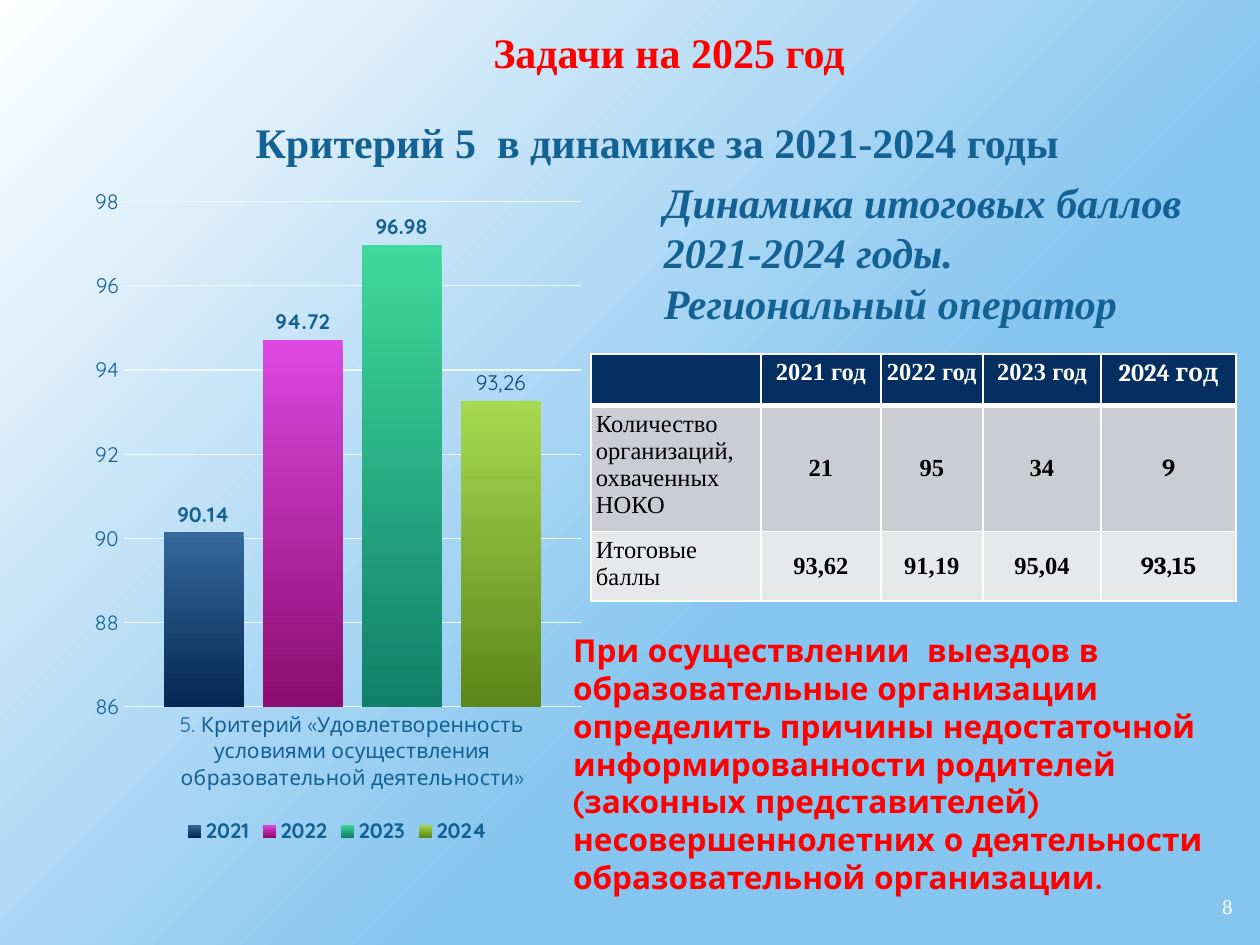
from dataclasses import dataclass

import pptx
import pptx.chart.data
import pptx.dml.color
import pptx.enum.chart
import pptx.enum.dml
import pptx.enum.text
import pptx.oxml
import pptx.oxml.ns
import pptx.util
from pptx.util import Inches

RGBColor = pptx.dml.color.RGBColor
PP_ALIGN = pptx.enum.text.PP_ALIGN
ANCHOR = pptx.enum.text.MSO_ANCHOR

WHITE = RGBColor(0xFF, 0xFF, 0xFF)
BLACK = RGBColor(0, 0, 0)
RED = RGBColor(0xFF, 0, 0)
SKY = RGBColor(0x86, 0xC5, 0xEF)
TEAL = RGBColor(0x14, 0x61, 0x94)
LABEL_BLUE = RGBColor(0x0F, 0x49, 0x6F)
NAVY = RGBColor(0x05, 0x2F, 0x61)
GRID = RGBColor(0xEA, 0xFA, 0xFD)
GREY = RGBColor(0xCC, 0xCD, 0xD2)
LIGHT_GREY = RGBColor(0xE7, 0xE8, 0xEA)
SERIF, SANS, CAMBRIA = "Times New Roman", "Quicksand", "Cambria"


@dataclass(frozen=True)
class Style:
    size: float
    color: RGBColor
    face: str = SERIF
    bold: bool = False
    italic: bool = False


@dataclass(frozen=True)
class TextBlock:
    box: tuple[float, float, float, float]
    lines: tuple[str, ...]
    style: Style
    align: PP_ALIGN = PP_ALIGN.LEFT
    spacing: float = 1.0
    compact: bool = False


@dataclass(frozen=True)
class YearBar:
    year: str
    score: float
    top: RGBColor
    bottom: RGBColor
    label_color: RGBColor = TEAL
    label: str = ""


@dataclass(frozen=True)
class TableRow:
    height: float
    texts: tuple[str, ...]
    fill: RGBColor
    color: RGBColor = BLACK
    header: bool = False


TEXTS = (
    TextBlock((5.17, 1.35, 4.32, 1.31),
              ("Динамика итоговых баллов 2021-2024 годы.", "Региональный оператор"),
              Style(24, TEAL, bold=True, italic=True)),
    TextBlock((1.93, 0.92, 6.69, 0.54), ("Критерий 5  в динамике за 2021-2024 годы",),
              Style(24, TEAL, bold=True), spacing=0.9),
    TextBlock((9.6, 7.06, 0.28, 0.27), ("8",), Style(12, WHITE), PP_ALIGN.CENTER, compact=True),
    TextBlock((1.61, 0.21, 7.4, 0.54), ("Задачи на 2025 год",),
              Style(24, RED, bold=True), PP_ALIGN.CENTER, 0.9),
    TextBlock((4.45, 4.96, 5.29, 2.22),
              ("При осуществлении  выездов в образовательные организации определить причины "
               "недостаточной информированности родителей (законных представителей) "
               "несовершеннолетних о деятельности образовательной организации.",),
              Style(18, RED, SANS, bold=True)),
)
CRITERION = "5. Критерий «Удовлетворенность условиями осуществления образовательной деятельности»"
BARS = (
    YearBar("2021", 90.14, RGBColor(0x35, 0x69, 0x9B), RGBColor(0x04, 0x28, 0x53)),
    YearBar("2022", 94.72, RGBColor(0xDC, 0x48, 0xE1), RGBColor(0x8D, 0x0C, 0x6F)),
    YearBar("2023", 96.98, RGBColor(0x3F, 0xD9, 0x9B), RGBColor(0x11, 0x80, 0x6A)),
    YearBar("2024", 93.26, RGBColor(0xA6, 0xD9, 0x4E), RGBColor(0x5B, 0x87, 0x1B),
            LABEL_BLUE, "93,26"),
)
COLUMN_WIDTHS = (1.35, 0.95, 0.81, 0.94, 1.07)
ROWS = (
    TableRow(0.41, ("", "2021 год", "2022 год", "2023 год", "2024 год"), NAVY, WHITE, True),
    TableRow(1.0, ("Количество организаций, охваченных НОКО", "21", "95", "34", "9"), GREY),
    TableRow(0.55, ("Итоговые баллы", "93,62", "91,19", "95,04", "93,15"), LIGHT_GREY),
)


def apply_style(font, style: Style) -> None:
    font.size = pptx.util.Pt(style.size)
    font.name = style.face
    font.bold = style.bold
    font.italic = style.italic
    font.color.rgb = style.color


def apply_gradient(fill, start: RGBColor, finish: RGBColor, angle: float, reach: float = 1) -> None:
    fill.gradient()
    fill.gradient_angle = angle
    first, last = fill.gradient_stops
    first.color.rgb, last.color.rgb = start, finish
    first.position, last.position = 0, reach


def add_text(slide, block: TextBlock) -> None:
    frame = slide.shapes.add_textbox(*map(Inches, block.box)).text_frame
    frame.word_wrap = True
    if block.compact:
        frame.margin_left = frame.margin_right = 0
        frame.vertical_anchor = ANCHOR.MIDDLE
    for index, line in enumerate(block.lines):
        paragraph = frame.add_paragraph() if index else frame.paragraphs[0]
        paragraph.alignment = block.align
        paragraph.line_spacing = block.spacing
        run = paragraph.add_run()
        run.text = line
        apply_style(run.font, block.style)


def wrap_labels(axis) -> None:
    body = axis._element.find(".//" + pptx.oxml.ns.qn("a:bodyPr"))
    for name, value in (("rot", "-60000000"), ("vert", "horz"), ("wrap", "square")):
        body.set(name, value)


def style_bar(series, bar: YearBar) -> None:
    outside = pptx.enum.chart.XL_LABEL_POSITION.OUTSIDE_END
    apply_gradient(series.format.fill, bar.top, bar.bottom, 270)
    labels = series.data_labels
    labels.show_value = True
    labels.number_format = "0.00"
    labels.number_format_is_linked = False
    labels.position = outside
    apply_style(labels.font, Style(12, bar.label_color, SANS, bold=True))
    if bar.label:
        label = series.points[0].data_label
        run = label.text_frame.paragraphs[0].add_run()
        run.text = bar.label
        apply_style(run.font, Style(12, bar.label_color, SANS))
        label.position = outside


def add_score_chart(slide) -> None:
    scores = pptx.chart.data.CategoryChartData()
    scores.categories = [CRITERION]
    for bar in BARS:
        scores.add_series(bar.year, [bar.score])
    chart = slide.shapes.add_chart(
        pptx.enum.chart.XL_CHART_TYPE.COLUMN_CLUSTERED,
        Inches(0.67), Inches(1.39), Inches(4.02), Inches(5.35), scores).chart
    apply_style(chart.font, Style(10, WHITE, SANS))
    chart.has_title = False
    chart.has_legend = True
    chart.legend.position = pptx.enum.chart.XL_LEGEND_POSITION.BOTTOM
    chart.legend.include_in_layout = False
    apply_style(chart.legend.font, Style(12, TEAL, SANS, bold=True))
    plot = chart.plots[0]
    plot.gap_width, plot.overlap, plot.vary_by_categories = 100, -24, False
    for axis in (chart.category_axis, chart.value_axis):
        axis.major_tick_mark = axis.minor_tick_mark = pptx.enum.chart.XL_TICK_MARK.NONE
        apply_style(axis.tick_labels.font, Style(12, TEAL, SANS))
        wrap_labels(axis)
    values = chart.value_axis
    values.minimum_scale, values.maximum_scale, values.major_unit = 86, 98, 2
    values.has_major_gridlines = True
    values.format.line.fill.background()
    for line in (chart.category_axis.format.line, values.major_gridlines.format.line):
        line.color.rgb = GRID
        line.width = pptx.util.Pt(0.75)
    for series, bar in zip(plot.series, BARS):
        style_bar(series, bar)


def add_borders(cell, widths: dict[str, float]) -> None:
    properties = cell._tc.get_or_add_tcPr()
    for side, width in widths.items():
        properties.append(pptx.oxml.parse_xml(
            f'<a:ln{side} {pptx.oxml.ns.nsdecls("a")} w="{pptx.util.Pt(width)}">'
            f'<a:solidFill><a:srgbClr val="{WHITE}"/></a:solidFill></a:ln{side}>'))


def fill_cell(cell, row: TableRow, column: int) -> None:
    add_borders(cell, {"L": 1, "R": 1, "T": 1, "B": 3 if row.header else 1})
    cell.fill.solid()
    cell.fill.fore_color.rgb = row.fill
    cell.margin_left = cell.margin_right = cell.margin_top = cell.margin_bottom = Inches(0.04)
    numeric = column > 0
    cell.vertical_anchor = ANCHOR.MIDDLE if numeric and not row.header else ANCHOR.TOP
    paragraph = cell.text_frame.paragraphs[0]
    paragraph.alignment = PP_ALIGN.CENTER if numeric else PP_ALIGN.LEFT
    face = CAMBRIA if column == len(COLUMN_WIDTHS) - 1 else SERIF
    style = Style(14, row.color, face, bold=numeric)
    if row.texts[column]:
        run = paragraph.add_run()
        run.text = row.texts[column]
        apply_style(run.font, style)
    else:
        apply_style(paragraph.font, style)


def add_totals_table(slide) -> None:
    table = slide.shapes.add_table(
        len(ROWS), len(COLUMN_WIDTHS), Inches(4.69), Inches(2.81),
        Inches(sum(COLUMN_WIDTHS)), Inches(sum(row.height for row in ROWS))).table
    for column, width in zip(table.columns, COLUMN_WIDTHS):
        column.width = Inches(width)
    for index, row in enumerate(ROWS):
        table.rows[index].height = Inches(row.height)
        for column in range(len(COLUMN_WIDTHS)):
            fill_cell(table.cell(index, column), row, column)


def main() -> None:
    deck = pptx.Presentation()
    deck.slide_width, deck.slide_height = Inches(10), Inches(7.5)
    slide = deck.slides.add_slide(deck.slide_layouts[6])
    apply_gradient(slide.background.fill, WHITE, SKY, 315, 0.62)
    add_score_chart(slide)
    add_totals_table(slide)
    for block in TEXTS:
        add_text(slide, block)
    deck.save("out.pptx")


if __name__ == "__main__":
    main()
